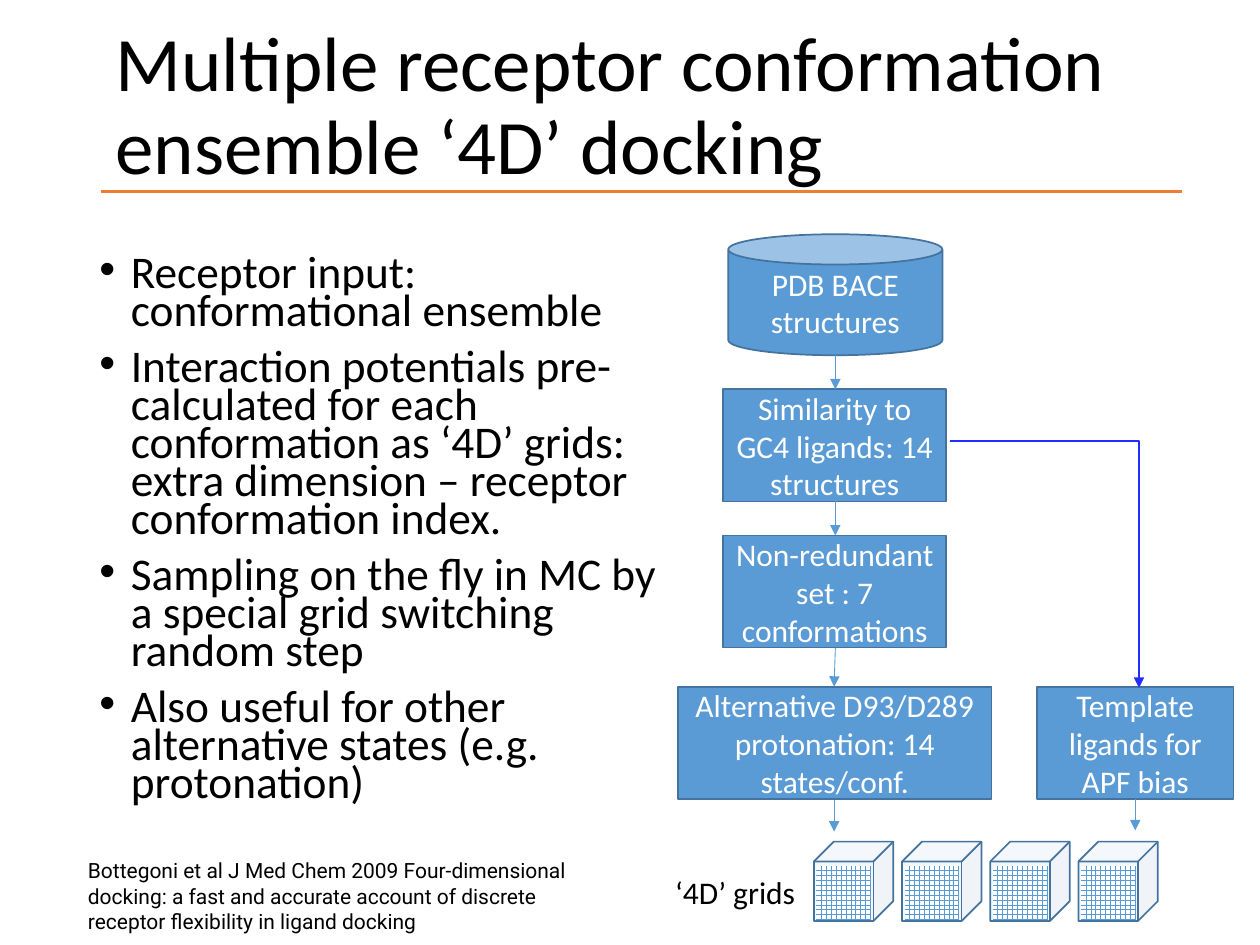
from typing import NamedTuple

from pptx import Presentation
from pptx.dml.color import RGBColor
from pptx.enum.dml import MSO_PATTERN
from pptx.enum.shapes import MSO_CONNECTOR, MSO_SHAPE as Shape
from pptx.enum.text import MSO_ANCHOR, PP_ALIGN
from pptx.oxml.ns import qn
from pptx.util import Inches, Pt
from lxml.etree import SubElement

BLACK = RGBColor(0x00, 0x00, 0x00)
WHITE = RGBColor(0xFF, 0xFF, 0xFF)
BLUE = RGBColor(0x5B, 0x9B, 0xD5)
OUTLINE = RGBColor(0x43, 0x73, 0x9E)
ORANGE = RGBColor(0xED, 0x7D, 0x31)
BRANCH_BLUE = RGBColor(0x22, 0x2E, 0xFF)


class Step(NamedTuple):
    text: str
    left: float
    top: float
    width: float
    height: float = 0.89
    kind: Shape = Shape.RECTANGLE


class Line(NamedTuple):
    x1: float
    y1: float
    x2: float
    y2: float


STEPS = [
    Step("PDB BACE structures", 5.78, 1.86, 1.7, 0.96, Shape.CAN),
    Step("Similarity to GC4 ligands: 14 structures", 5.74, 3.09, 1.77),
    Step("Non-redundant set : 7 conformations", 5.74, 4.25, 1.77),
    Step("Alternative D93/D289 protonation: 14 states/conf.", 5.38, 5.45, 2.49),
    Step("Template ligands for APF bias", 8.23, 5.45, 1.56),
]
ARROWS = [
    Line(6.63, 2.82, 6.63, 3.09),
    Line(6.63, 3.98, 6.63, 4.25),
    Line(6.63, 5.14, 6.62, 5.45),
    Line(6.62, 6.35, 6.62, 6.6),
    Line(9.01, 6.34, 9.01, 6.59),
]
POINTS = [
    "Receptor input: conformational ensemble",
    "Interaction potentials pre-calculated for each conformation as ‘4D’ grids: "
    "extra dimension – receptor conformation index.",
    "Sampling on the fly in MC by a special grid switching random step",
    "Also useful for other alternative states (e.g. protonation)",
]
CUBE_COUNT, CUBE_LEFT, CUBE_PITCH = 4, 6.46, 0.7


def style_font(paragraph, size: float, color: RGBColor, name: str = "Calibri") -> None:
    paragraph.font.size = Pt(size)
    paragraph.font.name = name
    paragraph.font.color.rgb = color


def add_text(slide, text: str, left: float, top: float, width: float, height: float,
             size: float, name: str = "Calibri"):
    frame = slide.shapes.add_textbox(
        Inches(left), Inches(top), Inches(width), Inches(height)).text_frame
    frame.word_wrap = True
    frame.text = text
    style_font(frame.paragraphs[0], size, BLACK, name)
    return frame


def add_bullets(slide, points: list[str]) -> None:
    frame = add_text(slide, "", 0.69, 2, 4.81, 4.76, 25.9)
    for index, point in enumerate(points):
        paragraph = frame.add_paragraph() if index else frame.paragraphs[0]
        paragraph.text = point
        paragraph.line_spacing = 0.7
        paragraph.space_before = Pt(10 if index else 0)
        properties = paragraph._p.get_or_add_pPr()
        properties.set("marL", str(Inches(0.25)))
        properties.set("indent", str(Inches(-0.25)))
        for old in properties.findall(qn("a:defRPr")):
            properties.remove(old)
        SubElement(properties, qn("a:buFont"), typeface="Arial")
        SubElement(properties, qn("a:buChar"), char="•")
        style_font(paragraph, 25.9, BLACK)


def add_arrowhead(line_shape) -> None:
    outline = line_shape._element.spPr.find(qn("a:ln"))
    SubElement(outline, qn("a:tailEnd"), type="triangle")


def add_line(slide, line: Line, color: RGBColor, width: float, arrow: bool = False) -> None:
    connector = slide.shapes.add_connector(
        MSO_CONNECTOR.STRAIGHT, *(Inches(value) for value in line))
    connector.line.color.rgb = color
    connector.line.width = Pt(width)
    if arrow:
        add_arrowhead(connector)
    SubElement(connector._element.spPr, qn("a:effectLst"))


def add_solid(shapes, kind: Shape, left: float, top: float, width: float, height: float):
    solid = shapes.add_shape(kind, Inches(left), Inches(top), Inches(width), Inches(height))
    solid.shadow.inherit = False
    solid.fill.solid()
    solid.fill.fore_color.rgb = BLUE
    solid.line.color.rgb = OUTLINE
    solid.line.width = Pt(1)
    return solid


def add_step(slide, step: Step) -> None:
    box = add_solid(slide.shapes, step.kind, step.left, step.top, step.width, step.height)
    frame = box.text_frame
    frame.word_wrap = True
    frame.vertical_anchor = MSO_ANCHOR.MIDDLE
    frame.text = step.text
    frame.paragraphs[0].alignment = PP_ALIGN.CENTER
    style_font(frame.paragraphs[0], 18, WHITE)


def add_grid_cube(slide, left: float) -> None:
    shapes = slide.shapes.add_group_shape().shapes
    cube = add_solid(shapes, Shape.CUBE, left, 6.68, 0.63, 0.63)
    tint = cube._element.spPr.find(qn("a:solidFill"))[0]
    SubElement(tint, qn("a:alpha"), val="8000")
    grid = add_solid(shapes, Shape.RECTANGLE, left + 0.02, 6.87, 0.43, 0.43)
    grid.fill.patterned()
    grid.fill.pattern = MSO_PATTERN.LARGE_GRID
    grid.fill.fore_color.rgb = BLUE
    grid.fill.back_color.rgb = WHITE
    grid.line.fill.background()


def add_branch(slide) -> None:
    builder = slide.shapes.build_freeform(Inches(7.54), Inches(3.5))
    corners = [(9.04, 3.5), (9.04, 5.46)]
    builder.add_line_segments([(Inches(x), Inches(y)) for x, y in corners], close=False)
    branch = builder.convert_to_shape()
    branch.shadow.inherit = False
    branch.fill.background()
    branch.line.color.rgb = BRANCH_BLUE
    branch.line.width = Pt(1)
    add_arrowhead(branch)


def main() -> None:
    deck = Presentation()
    deck.slide_width, deck.slide_height = Inches(10), Inches(7.5)
    slide = deck.slides.add_slide(deck.slide_layouts[6])

    # Title and rule
    title = add_text(slide, "Multiple receptor conformation ensemble ‘4D’ docking",
                     0.82, 0.13, 8.62, 1.45, 44)
    title.vertical_anchor = MSO_ANCHOR.MIDDLE
    title.paragraphs[0].line_spacing = 0.9
    add_line(slide, Line(0.8, 1.52, 9.38, 1.52), ORANGE, 2.25)

    # Key points
    add_bullets(slide, POINTS)

    # Workflow
    for step in STEPS:
        add_step(slide, step)
    for index in range(CUBE_COUNT):
        add_grid_cube(slide, CUBE_LEFT + index * CUBE_PITCH)
    add_text(slide, "‘4D’ grids", 5.26, 6.88, 1.71, 0.4, 18)
    for arrow in ARROWS:
        add_line(slide, arrow, BLUE, 0.5, arrow=True)
    add_branch(slide)

    # Citation
    add_text(slide, "Bottegoni et al J Med Chem 2009 Four-dimensional docking: a fast and "
             "accurate account of discrete receptor flexibility in ligand docking",
             0.6, 6.76, 4.14, 0.71, 12, "Roboto")

    deck.save("out.pptx")


if __name__ == "__main__":
    main()
